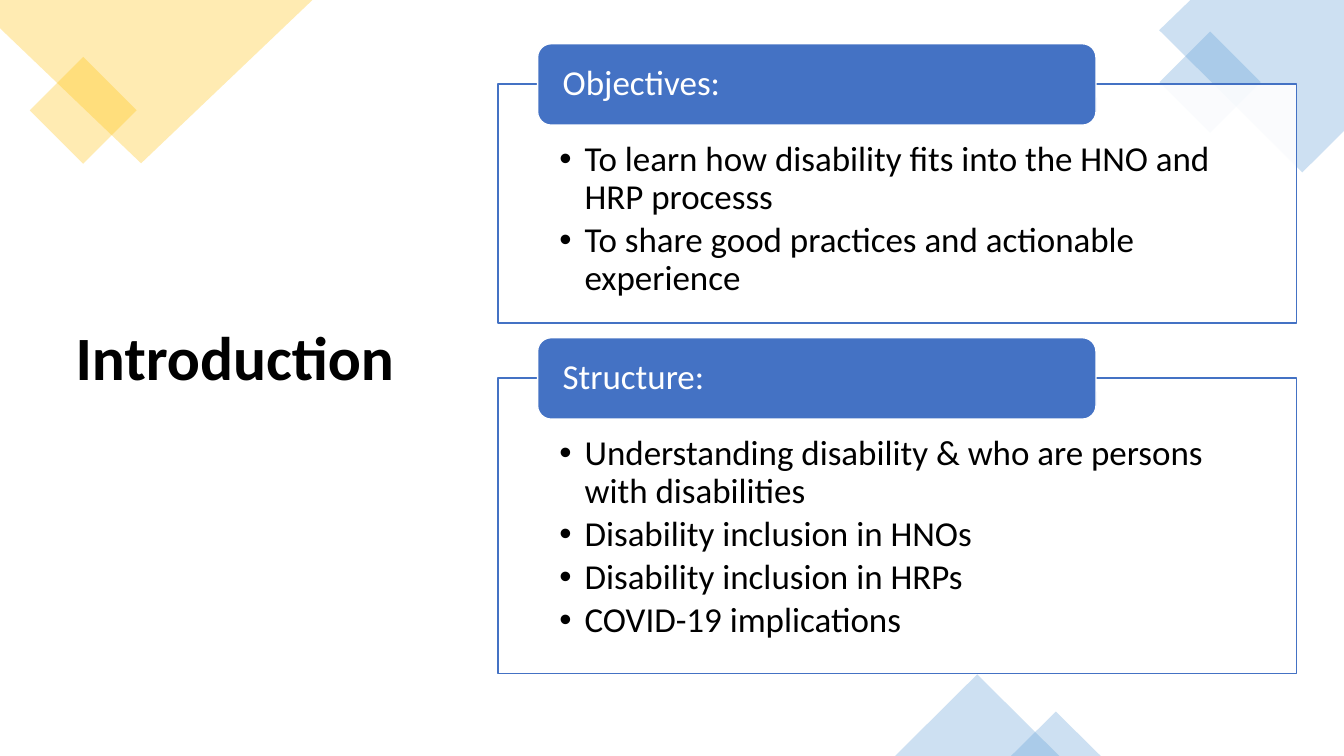
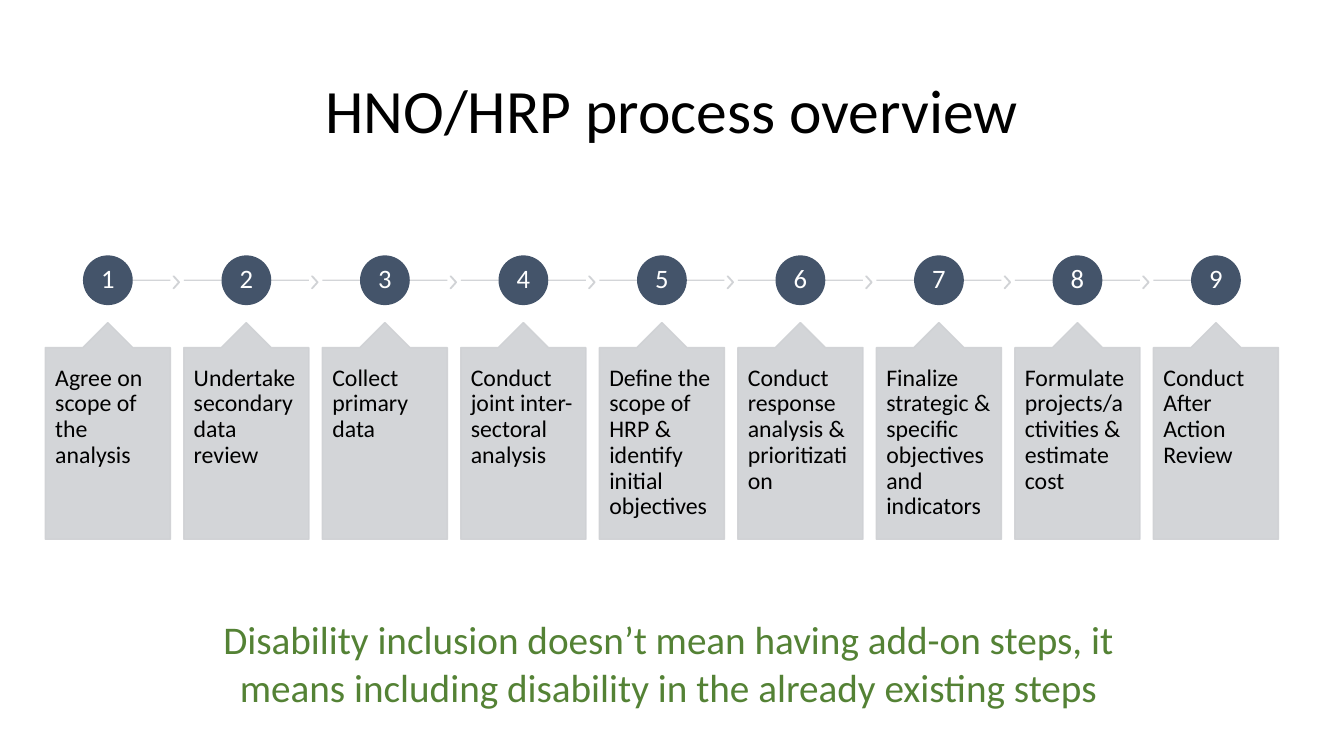
import lxml.etree
import pptx
import pptx.dml.color
import pptx.enum.shapes
import pptx.enum.text
import pptx.oxml.ns
import pptx.util

RGB = pptx.dml.color.RGBColor
KIND = pptx.enum.shapes.MSO_SHAPE
LINE = pptx.enum.shapes.MSO_CONNECTOR
ALIGN = pptx.enum.text.PP_ALIGN
ANCHOR = pptx.enum.text.MSO_ANCHOR
qn = pptx.oxml.ns.qn

GOLD = RGB(0xFF, 0xC0, 0x00)
SKY = RGB(0x5B, 0x9B, 0xD5)
BLUE = RGB(0x44, 0x72, 0xC4)
SLATE = RGB(0x44, 0x54, 0x6A)
GREY = RGB(0xCF, 0xD1, 0xD4)
GREEN = RGB(0x54, 0x82, 0x35)
BLACK = RGB(0, 0, 0)
WHITE = RGB(255, 255, 255)

COLS, ROWS = 160, 90
CELL = pptx.util.Pt(6)
PAD = (1.2, 0.6, 1.2, 0.6)
TWO_LISTS, TITLE_ONLY = 3, 5


def cells(*sizes):
    """Turn grid cells into slide lengths."""
    return [round(size * CELL) for size in sizes]


def fade(shape, color, alpha):
    """Make every part of the shape in this colour see-through."""
    for node in shape._element.spPr.iter(qn("a:srgbClr")):
        if node.get("val") == str(color):
            lxml.etree.SubElement(node, qn("a:alpha"), val=str(alpha * 1000))


class Deck:
    def __init__(self):
        self.show = pptx.Presentation()
        self.show.slide_width, self.show.slide_height = cells(COLS, ROWS)
        self.slide = None

    def add(self, layout):
        self.slide = self.show.slides.add_slide(self.show.slide_layouts[layout])

    def paint(self, shape, fill, line=None, alpha=100):
        shape.fill.solid()
        shape.fill.fore_color.rgb = fill
        if line is None:
            shape.line.fill.background()
        else:
            shape.line.color.rgb = line
            shape.line.width = pptx.util.Pt(1)
        if alpha < 100:
            fade(shape, fill, alpha)

    def shape(self, kind, box, fill, line=None, alpha=100, turn=0, adjust=()):
        item = self.slide.shapes.add_shape(kind, *cells(*box))
        item.shadow.inherit = False
        item.rotation = turn
        for i, value in enumerate(adjust):
            item.adjustments[i] = value
        self.paint(item, fill, line, alpha)
        return item

    def patch(self, points, fill, alpha):
        """Draw a closed outline without a border."""
        first, *rest = [cells(*point) for point in points]
        pen = self.slide.shapes.build_freeform(*first)
        pen.add_line_segments(rest, close=True)
        item = pen.convert_to_shape()
        item.shadow.inherit = False
        self.paint(item, fill, alpha=alpha)

    def rule(self, left, right, y, color, alpha):
        item = self.slide.shapes.add_connector(LINE.STRAIGHT, *cells(left, y, right, y))
        item.line.color.rgb = color
        item.line.width = pptx.util.Pt(1)
        fade(item, color, alpha)
        lxml.etree.SubElement(item._element.spPr, qn("a:effectLst"))

    def letter(self, shape, lines, size, color=BLACK, bold=False, align=ALIGN.LEFT,
               anchor=ANCHOR.TOP, pad=PAD, space=0.9, after=0):
        """Set the text of a shape and its format."""
        frame = shape.text_frame
        left, top, right, bottom = cells(*pad)
        look = dict(margin_left=left, margin_top=top, margin_right=right,
                    margin_bottom=bottom, word_wrap=True, vertical_anchor=anchor,
                    auto_size=pptx.enum.text.MSO_AUTO_SIZE.NONE)
        flow = dict(alignment=align, line_spacing=space,
                    space_before=pptx.util.Pt(0), space_after=pptx.util.Pt(after))
        face = dict(name="Calibri", size=pptx.util.Pt(size), bold=bold)
        for key, value in look.items():
            setattr(frame, key, value)
        frame.text = "\n".join(lines)
        for para in frame.paragraphs:
            for key, value in flow.items():
                setattr(para, key, value)
            for run in para.runs:
                for key, value in face.items():
                    setattr(run.font, key, value)
                run.font.color.rgb = color

    def place(self, shape, box):
        shape.left, shape.top, shape.width, shape.height = cells(*box)

    def title(self, text, box, **style):
        item = self.slide.shapes.title
        self.place(item, box)
        self.letter(item, [text], 44, anchor=ANCHOR.MIDDLE, **style)

    def note(self, text, box, size, color):
        item = self.slide.shapes.add_textbox(*cells(*box))
        self.letter(item, [text], size, color, align=ALIGN.CENTER, space=1)

    def panel(self, index, top, height, head, points):
        """Frame a list placeholder and put a heading tab on its top edge."""
        item = self.slide.placeholders[index]
        self.slide.shapes._spTree.append(item._element)  # lift above the corner art
        self.place(item, (59.28, top, 95.04, height))
        self.paint(item, WHITE, BLUE, 90)
        self.letter(item, points, 25, pad=(7.32, 6.84, 7.32, 2.28), after=3.75)
        indent = cells(3)[0]
        for para in item.text_frame.paragraphs:
            props = para._p.get_or_add_pPr()
            props.set("marL", str(indent))
            props.set("indent", str(-indent))
        tab = self.shape(KIND.ROUNDED_RECTANGLE, (64, top - 4.8, 66.48, 9.7), BLUE, WHITE)
        self.letter(tab, [head], 25, WHITE, anchor=ANCHOR.MIDDLE, pad=(2.52, 0, 2.52, 0))

    def step(self, i, count, text):
        """Draw one numbered stage with its link and its callout."""
        left, wide, dot, mid = 5.4 + 16.49 * i, 14.88, 5.76, 33.36
        heart = left + wide / 2
        last = i == count - 1
        self.rule(left if i else heart, heart if last else left + wide, mid, GREY, 90)
        if not last:
            self.shape(KIND.CHEVRON, (left + 15.24, mid - 0.48, 0.72, 1.44),
                       GREY, GREY, 90, adjust=[0.9])
        disc = self.shape(KIND.OVAL, (heart - dot / 2, mid - dot / 2, dot, dot), SLATE, SLATE)
        self.letter(disc, [str(i + 1)], 19, WHITE, align=ALIGN.CENTER,
                    anchor=ANCHOR.MIDDLE, pad=(0.24,) * 4)
        card = self.shape(KIND.UP_ARROW_CALLOUT, (left, 38.4, wide, 25.8), GREY, GREY, 90,
                          adjust=[0.5, 0.2, 0.2, 1])
        self.letter(card, [text], 17, pad=(1.2, 2.16, 1.2, 2.16))


PANELS = [
    (10, 28.44, "Objectives:", [
        "To learn how disability fits into the HNO and HRP processs",
        "To share good practices and actionable experience"]),
    (45, 35.16, "Structure:", [
        "Understanding disability & who are persons with disabilities",
        "Disability inclusion in HNOs",
        "Disability inclusion in HRPs",
        "COVID-19 implications"]),
]

STEPS = [
    "Agree on scope of the analysis",
    "Undertake secondary data review",
    "Collect primary data",
    "Conduct joint inter-sectoral analysis",
    "Define the scope of HRP & identify initial objectives",
    "Conduct response analysis & prioritization",
    "Finalize strategic & specific objectives and indicators",
    "Formulate projects/activities & estimate cost",
    "Conduct After Action Review",
]


def intro(deck):
    deck.add(TWO_LISTS)
    deck.shape(KIND.RECTANGLE, (5.4, 8.64, 9, 9), GOLD, alpha=30, turn=45)
    deck.patch([(0, 0), (37.2, 0), (16.8, 19.44), (0, 3.36)], GOLD, 30)
    deck.patch([(141.72, 0), (COLS, 0), (COLS, 15.6), (155.04, 20.52), (138, 3.6)], SKY, 30)
    deck.shape(KIND.RECTANGLE, (139.8, 5.52, 8.52, 8.52), SKY, alpha=30, turn=45)
    for left, wide, high in [(106.56, 19.56, 9.72), (120.36, 10.68, 5.28)]:
        deck.shape(KIND.ISOSCELES_TRIANGLE, (left, ROWS - high, wide, high), SKY, alpha=30)
    for index, panel in enumerate(PANELS, 1):
        deck.panel(index, *panel)
    deck.title("Introduction", (7.8, 8.4, 41.52, 69), bold=True)


def process(deck):
    deck.add(TITLE_ONLY)
    deck.note("Disability inclusion doesn’t mean having add-on steps, it means including "
              "disability in the already existing steps", (20.4, 72.72, 118.32, 12.5), 28, GREEN)
    for i, text in enumerate(STEPS):
        deck.step(i, len(STEPS), text)
    deck.title("HNO/HRP process overview", (11, 4.8, 138, 17.4), align=ALIGN.CENTER)


def main():
    deck = Deck()
    intro(deck)
    process(deck)
    deck.show.save("out.pptx")


if __name__ == "__main__":
    main()
